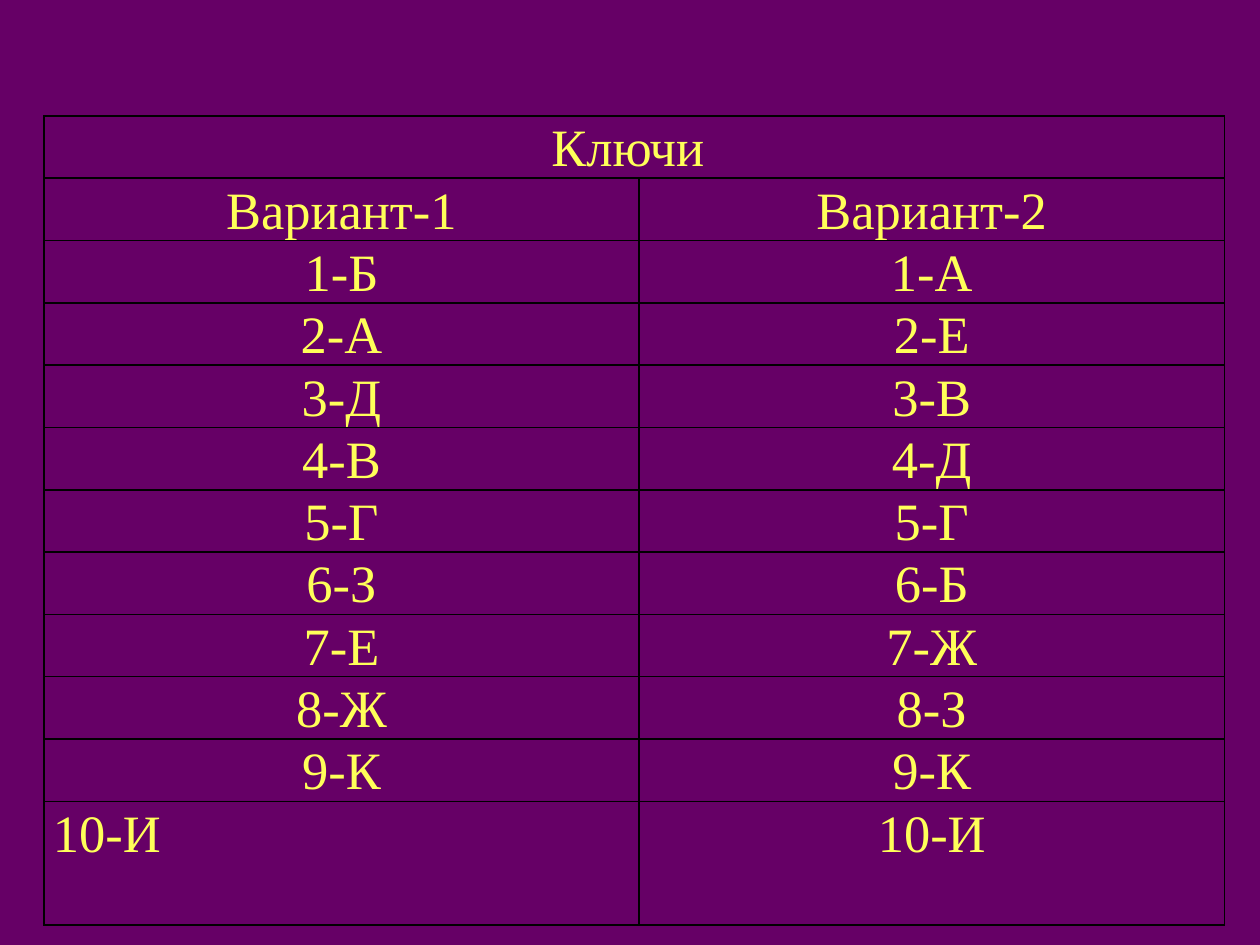
from dataclasses import dataclass

from lxml.etree import SubElement
from pptx import Presentation
from pptx.dml.color import RGBColor
from pptx.enum.text import PP_ALIGN
from pptx.oxml.ns import qn
from pptx.util import Inches, Pt


@dataclass(frozen=True)
class Theme:
    background: str = "660066"
    text: str = "FFFF59"
    border: str = "000000"
    font: str = "Times New Roman"
    size: int = 30
    border_width: int = 1
    line_spacing: float = 1.07


THEME = Theme()
SLIDE_SIZE = Inches(10), Inches(7.5)
TABLE_LEFT, TABLE_TOP = Inches(0.35), Inches(0.92)
COLUMN_WIDTHS = Inches(4.72), Inches(4.65)
ROW_HEIGHT = Inches(0.49)
HEADING = "Ключи "
ANSWERS = {"Вариант-1": "БАДВГЗЕЖКИ", "Вариант-2": "АЕВДГБЖЗКИ"}
CELL_FORMAT = {
    "margin_left": Inches(0.07),
    "margin_right": Inches(0.07),
    "margin_top": 0,
    "margin_bottom": 0,
}
FONT_FORMAT = {"name": THEME.font, "size": Pt(THEME.size)}


def apply_format(target, values):
    for name, value in values.items():
        setattr(target, name, value)


def add_borders(cell):
    properties = cell._tc.get_or_add_tcPr()
    for side in ("lnL", "lnR", "lnT", "lnB"):
        line = SubElement(properties, qn(f"a:{side}"), w=str(Pt(THEME.border_width)))
        fill = SubElement(line, qn("a:solidFill"))
        SubElement(fill, qn("a:srgbClr"), val=THEME.border)


def style_cell(cell):
    add_borders(cell)
    cell.fill.background()
    apply_format(cell, CELL_FORMAT)


def write_cell(cell, text, alignment):
    para = cell.text_frame.paragraphs[0]
    apply_format(para, {"alignment": alignment, "line_spacing": THEME.line_spacing})
    span = para.add_run()
    span.text = text
    apply_format(span.font, FONT_FORMAT)
    span.font.color.rgb = RGBColor.from_string(THEME.text)


def answer_columns():
    return [
        [variant, *(f"{number}-{letter}" for number, letter in enumerate(letters, 1))]
        for variant, letters in ANSWERS.items()
    ]


def add_key_table(page):
    columns = answer_columns()
    row_count = len(columns[0]) + 1
    last_row = row_count - 1
    table = page.shapes.add_table(
        row_count, len(columns), TABLE_LEFT, TABLE_TOP,
        sum(COLUMN_WIDTHS), ROW_HEIGHT * (row_count + 1),
    ).table
    apply_format(table, {"first_row": False, "horz_banding": False})
    for column, width in zip(table.columns, COLUMN_WIDTHS):
        column.width = width
    for index, row in enumerate(table.rows):
        row.height = ROW_HEIGHT * (2 if index == last_row else 1)
    for cell in table.iter_cells():
        style_cell(cell)
    heading = table.cell(0, 0)
    heading.merge(table.cell(0, len(columns) - 1))
    write_cell(heading, HEADING, PP_ALIGN.CENTER)
    for column_index, texts in enumerate(columns):
        for row_index, text in enumerate(texts, 1):
            at_left = (row_index, column_index) == (last_row, 0)
            alignment = PP_ALIGN.LEFT if at_left else PP_ALIGN.CENTER
            write_cell(table.cell(row_index, column_index), text, alignment)


def main():
    deck = Presentation()
    deck.slide_width, deck.slide_height = SLIDE_SIZE
    page = deck.slides.add_slide(deck.slide_layouts[6])
    page.background.fill.solid()
    page.background.fill.fore_color.rgb = RGBColor.from_string(THEME.background)
    add_key_table(page)
    deck.save("out.pptx")


if __name__ == "__main__":
    main()
